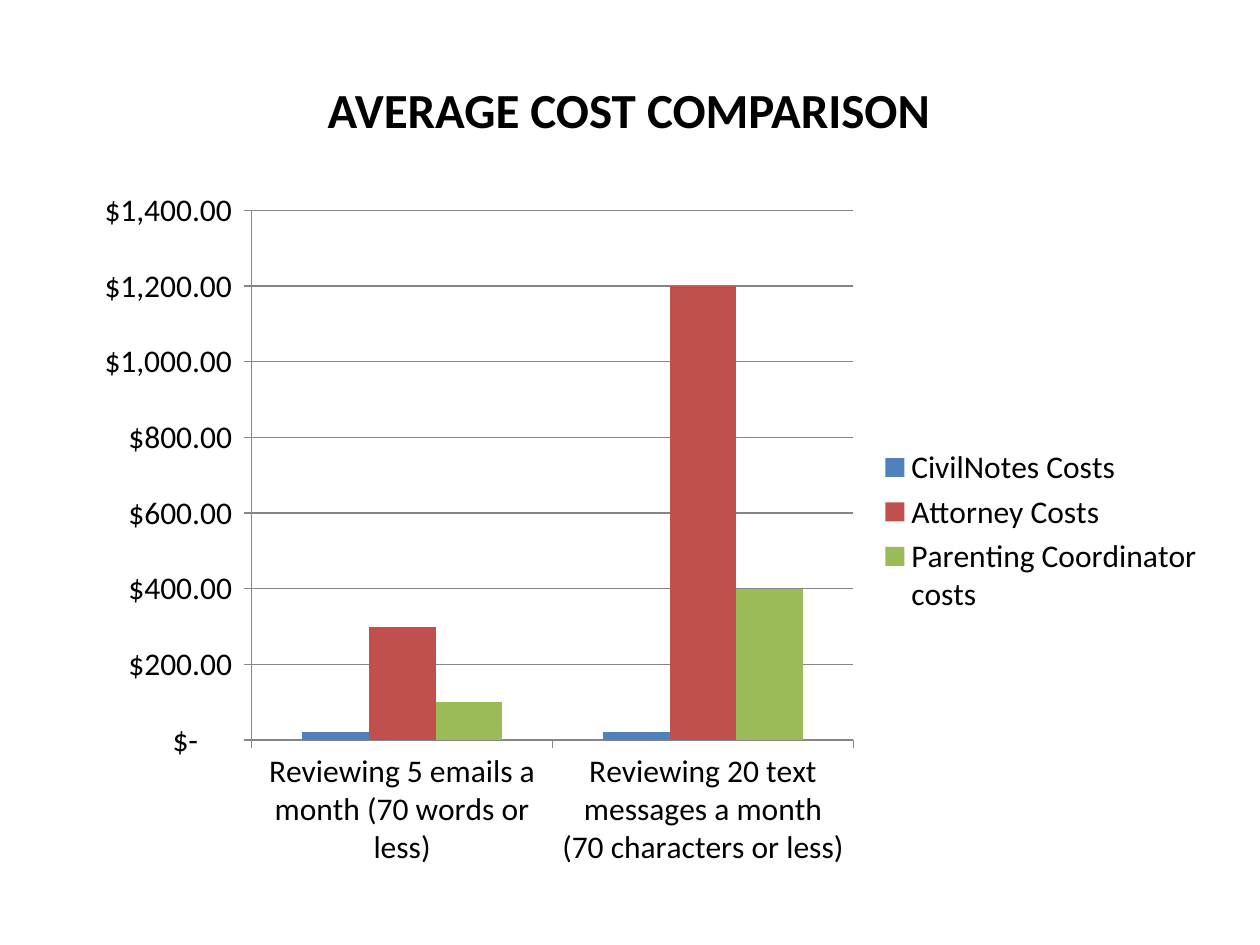
from lxml import etree
from pptx import Presentation
from pptx.chart.data import CategoryChartData
from pptx.dml.color import RGBColor
from pptx.enum import chart as charts, text
from pptx.oxml import ns
from pptx.util import Pt

TITLE = "AVERAGE COST COMPARISON"
CATEGORIES = [
    "Reviewing 5 emails a month (70 words or less)",
    "Reviewing 20 text messages a month (70 characters or less)",
]
SERIES = [  # name, values, colour
    ("CivilNotes Costs", (20, 20), "4F81BD"),
    ("Attorney Costs", (300, 1200), "C0504D"),
    ("Parenting Coordinator costs", (100, 400), "9BBB59"),
]
CURRENCY = '_("$"* #,##0.00_);_("$"* \\(#,##0.00\\);_("$"* "-"??_);_(@_)'

THEME = {"font": "Calibri", "text": "000000", "line": "868686",
         "title_size": 28, "chart_size": 18}
SLIDE_SIZE = (720, 540)
TITLE_BOX = (161.3, 41.8, 396, 41)
CHART_BOX = (41.8, 102.2, 653.8, 402.5)
PLOT_AREA = {"x": 0.156, "y": 0.045, "w": 0.526, "h": 0.752}  # shares of the chart


def points(values):
    return [Pt(value) for value in values]


def style_font(font, size, bold=False):
    font.name = THEME["font"]
    font.size = Pt(size)
    font.bold = bold
    font.color.rgb = RGBColor.from_string(THEME["text"])


def style_line(line):
    line.color.rgb = RGBColor.from_string(THEME["line"])
    line.width = Pt(0.75)


def place_plot(chart):
    """Fix the inner plot area, which python-pptx cannot position itself."""
    plot_area = chart._chartSpace.chart.plotArea
    for old_layout in plot_area.findall(ns.qn("c:layout")):
        plot_area.remove(old_layout)
    layout = etree.Element(ns.qn("c:layout"))
    manual = etree.SubElement(layout, ns.qn("c:manualLayout"))
    settings = {"layoutTarget": "inner", "xMode": "edge", "yMode": "edge", **PLOT_AREA}
    for name, value in settings.items():
        etree.SubElement(manual, ns.qn(f"c:{name}")).set("val", str(value))
    plot_area.insert(0, layout)


def add_title(slide):
    title = slide.shapes.title
    title.left, title.top, title.width, title.height = points(TITLE_BOX)
    frame = title.text_frame
    frame.word_wrap = True
    frame.auto_size = text.MSO_AUTO_SIZE.NONE
    frame.vertical_anchor = text.MSO_ANCHOR.TOP
    paragraph = frame.paragraphs[0]
    paragraph.alignment = text.PP_ALIGN.CENTER
    run = paragraph.add_run()
    run.text = TITLE
    style_font(run.font, THEME["title_size"], bold=True)


def add_cost_chart(slide):
    data = CategoryChartData(number_format=CURRENCY)
    data.categories = CATEGORIES
    for name, values, _ in SERIES:
        data.add_series(name, values)
    chart = slide.shapes.add_chart(
        charts.XL_CHART_TYPE.COLUMN_CLUSTERED, *points(CHART_BOX), data).chart
    chart.has_title = False
    style_font(chart.font, THEME["chart_size"])

    plot = chart.plots[0]
    plot.vary_by_categories = False
    plot.gap_width = 150
    plot.overlap = 0
    for series, (_, _, colour) in zip(plot.series, SERIES):
        series.format.fill.solid()
        series.format.fill.fore_color.rgb = RGBColor.from_string(colour)

    for axis in (chart.category_axis, chart.value_axis):
        axis.major_tick_mark = charts.XL_TICK_MARK.OUTSIDE
        axis.minor_tick_mark = charts.XL_TICK_MARK.NONE
        style_line(axis.format.line)
    value_axis = chart.value_axis
    value_axis.minimum_scale, value_axis.maximum_scale = 0, 1400
    value_axis.major_unit = 200
    value_axis.has_major_gridlines = True
    style_line(value_axis.major_gridlines.format.line)
    value_axis.tick_labels.number_format = CURRENCY
    value_axis.tick_labels.number_format_is_linked = False

    chart.has_legend = True
    chart.legend.position = charts.XL_LEGEND_POSITION.RIGHT
    chart.legend.include_in_layout = False
    place_plot(chart)


def main():
    presentation = Presentation()
    presentation.slide_width, presentation.slide_height = points(SLIDE_SIZE)
    slide = presentation.slides.add_slide(presentation.slide_layouts[5])
    add_cost_chart(slide)
    add_title(slide)
    presentation.save("out.pptx")


if __name__ == "__main__":
    main()
